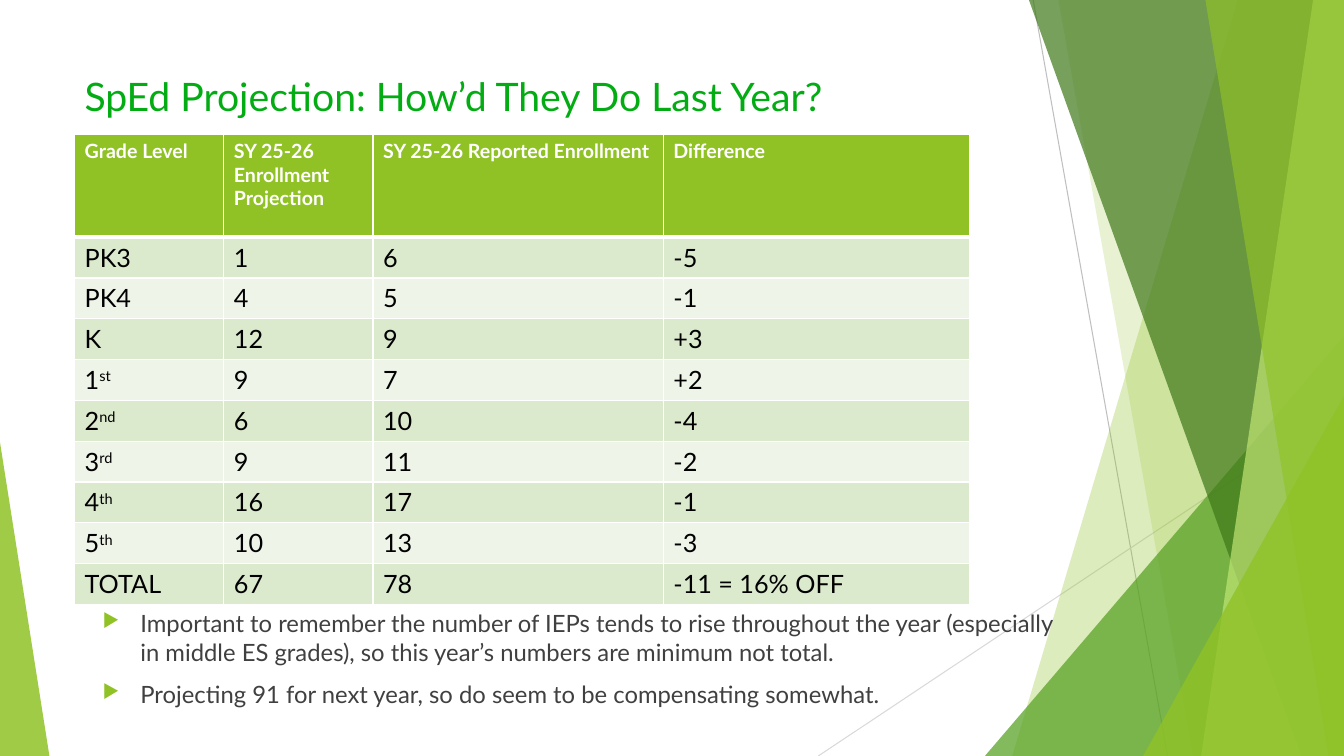
import dataclasses

import lxml.etree
import pptx
import pptx.dml.color
import pptx.enum.shapes
import pptx.enum.text
import pptx.oxml.ns
import pptx.util

Pt = pptx.util.Pt
qn = pptx.oxml.ns.qn

WIDTH, HEIGHT = 960, 540


@dataclasses.dataclass(frozen=True)
class Theme:
    font: str = "Lato"
    lime: str = "90C226"
    green: str = "54A021"
    forest: str = "3F7819"
    pale_lime: str = "C0E474"
    title: str = "03AC13"
    body: str = "404040"
    black: str = "000000"
    white: str = "FFFFFF"
    band_dark: str = "DBE9CD"
    band_light: str = "EEF4E8"
    line_dark: str = "BFBFBF"
    line_light: str = "D9D9D9"
    title_size: float = 28
    body_size: float = 17
    header_size: float = 14
    cell_size: float = 18


def rgb(color):
    return pptx.dml.color.RGBColor.from_string(color)


def add_element(parent, tag, **attributes):
    return lxml.etree.SubElement(parent, qn(tag), attributes)


@dataclasses.dataclass
class SlideBuilder:
    """Draw styled elements on one slide, with lengths in points."""

    slide: object
    theme: Theme

    def line(self, start, end, color):
        connector = self.slide.shapes.add_connector(
            pptx.enum.shapes.MSO_CONNECTOR.STRAIGHT, *map(Pt, start + end))
        connector.line.color.rgb = rgb(color)
        connector.line.width = Pt(0.75)
        add_element(connector._element.spPr, "a:effectLst")

    def paint(self, shape, color, opacity):
        shape.shadow.inherit = False
        shape.fill.solid()
        shape.fill.fore_color.rgb = rgb(color)
        shape.line.fill.background()
        fill_color = shape._element.spPr.find(".//" + qn("a:srgbClr"))
        add_element(fill_color, "a:alpha", val=str(opacity * 1000))

    def right_band(self, top_left, bottom_left, color, opacity):
        builder = self.slide.shapes.build_freeform(
            Pt(top_left), 0, scale=1.0)
        corners = [(WIDTH, 0), (WIDTH, HEIGHT), (bottom_left, HEIGHT)]
        builder.add_line_segments([(Pt(x), Pt(y)) for x, y in corners])
        self.paint(builder.convert_to_shape(), color, opacity)

    def corner_triangle(self, left, top, width, apex, color, opacity):
        triangle = self.slide.shapes.add_shape(
            pptx.enum.shapes.MSO_SHAPE.ISOSCELES_TRIANGLE,
            Pt(left), Pt(top), Pt(width), Pt(HEIGHT - top))
        triangle.adjustments[0] = apex
        self.paint(triangle, color, opacity)

    def run(self, paragraph, text, size, color, bold=False, raised=False):
        run = paragraph.add_run()
        run.text = text
        run.font.name = self.theme.font
        run.font.size = Pt(size)
        run.font.bold = bold
        run.font.color.rgb = rgb(color)
        if raised:
            run._r.get_or_add_rPr().set("baseline", "30000")

    def text_frame(self, left, top, width, height):
        box = self.slide.shapes.add_textbox(*map(Pt, (left, top, width, height)))
        box.text_frame.word_wrap = True
        box.text_frame.vertical_anchor = pptx.enum.text.MSO_ANCHOR.TOP
        return box.text_frame

    def title(self, text, *place):
        paragraph = self.text_frame(*place).paragraphs[0]
        self.run(paragraph, text, self.theme.title_size, self.theme.title)

    def bullets(self, texts, *place):
        frame = self.text_frame(*place)
        for index, text in enumerate(texts):
            paragraph = frame.add_paragraph() if index else frame.paragraphs[0]
            paragraph.space_before = Pt(10)
            properties = paragraph._p.get_or_add_pPr()
            properties.set("marL", str(Pt(27)))
            properties.set("indent", str(Pt(-27)))
            bullet_color = add_element(properties, "a:buClr")
            add_element(bullet_color, "a:srgbClr", val=self.theme.lime)
            add_element(properties, "a:buSzPct", val="80000")
            add_element(properties, "a:buChar", char="▶")
            self.run(paragraph, text, self.theme.body_size, self.theme.body)

    def cell_borders(self, cell, widths):
        properties = cell._tc.get_or_add_tcPr()
        for side, width in widths.items():
            border = add_element(properties, f"a:ln{side}", w=str(Pt(width)))
            fill = add_element(border, "a:solidFill")
            add_element(fill, "a:srgbClr", val=self.theme.white)

    def cell(self, cell, content, row):
        header = row == 0
        above = 3 if row == 1 else 1
        below = 3 if header else 1
        self.cell_borders(cell, {"L": 1, "R": 1, "T": above, "B": below})
        band = self.theme.band_dark if row % 2 else self.theme.band_light
        cell.fill.solid()
        cell.fill.fore_color.rgb = rgb(self.theme.lime if header else band)
        size = self.theme.header_size if header else self.theme.cell_size
        color = self.theme.white if header else self.theme.black
        text, _, ordinal = content.partition("^")
        paragraph = cell.text_frame.paragraphs[0]
        self.run(paragraph, text, size, color, bold=header)
        if ordinal:
            self.run(paragraph, ordinal, size, color, raised=True)

    def table(self, rows, left, top, column_widths, header_height, row_height):
        height = header_height + row_height * (len(rows) - 1)
        table = self.slide.shapes.add_table(
            len(rows), len(column_widths), Pt(left), Pt(top),
            Pt(sum(column_widths)), Pt(height)).table
        for column, width in zip(table.columns, column_widths):
            column.width = Pt(width)
        for index, values in enumerate(rows):
            table.rows[index].height = Pt(row_height if index else header_height)
            for column, value in enumerate(values):
                self.cell(table.cell(index, column), value, index)


ENROLLMENT = [
    ("Grade Level", "SY 25-26 Enrollment Projection",
     "SY 25-26 Reported Enrollment", "Difference"),
    ("PK3", "1", "6", "-5"),
    ("PK4", "4", "5", "-1"),
    ("K", "12", "9", "+3"),
    ("1^st", "9", "7", "+2"),
    ("2^nd", "6", "10", "-4"),
    ("3^rd", "9", "11", "-2"),
    ("4^th", "16", "17", "-1"),
    ("5^th", "10", "13", "-3"),
    ("TOTAL", "67", "78", "-11 = 16% OFF"),
]
NOTES = [
    "Important to remember the number of IEPs tends to rise throughout the year "
    "(especially in middle ES grades), so this year’s numbers are minimum not total.",
    "Projecting 91 for next year, so do seem to be compensating somewhat.",
]


def main():
    presentation = pptx.Presentation()
    presentation.slide_width, presentation.slide_height = Pt(WIDTH), Pt(HEIGHT)
    theme = Theme()
    slide = presentation.slides.add_slide(presentation.slide_layouts[6])
    builder = SlideBuilder(slide, theme)

    builder.line((738, 0), (834, HEIGHT), theme.line_dark)
    builder.line((WIDTH, 290), (584.5, HEIGHT), theme.line_light)
    builder.right_band(884, 723, theme.lime, 30)
    builder.right_band(756, 852, theme.lime, 20)
    builder.corner_triangle(703.5, 240, 256.5, 1, theme.green, 72)
    builder.right_band(735, 929.5, theme.forest, 70)
    builder.right_band(938, 858, theme.pale_lime, 70)
    builder.right_band(861, 949, theme.lime, 65)
    builder.corner_triangle(816.5, 283, 143.5, 1, theme.lime, 80)
    builder.corner_triangle(0, 316, 35.3, 0, theme.lime, 85)

    builder.title("SpEd Projection: How’d They Do Last Year?", 53.3, 48.2, 677, 104)
    builder.bullets(NOTES, 66.2, 431.3, 695, 86.4)
    builder.table(ENROLLMENT, 53.3, 95.8, (106.6, 106.6, 207.4, 218.9), 73.6, 29.15)
    presentation.save("out.pptx")


if __name__ == "__main__":
    main()
